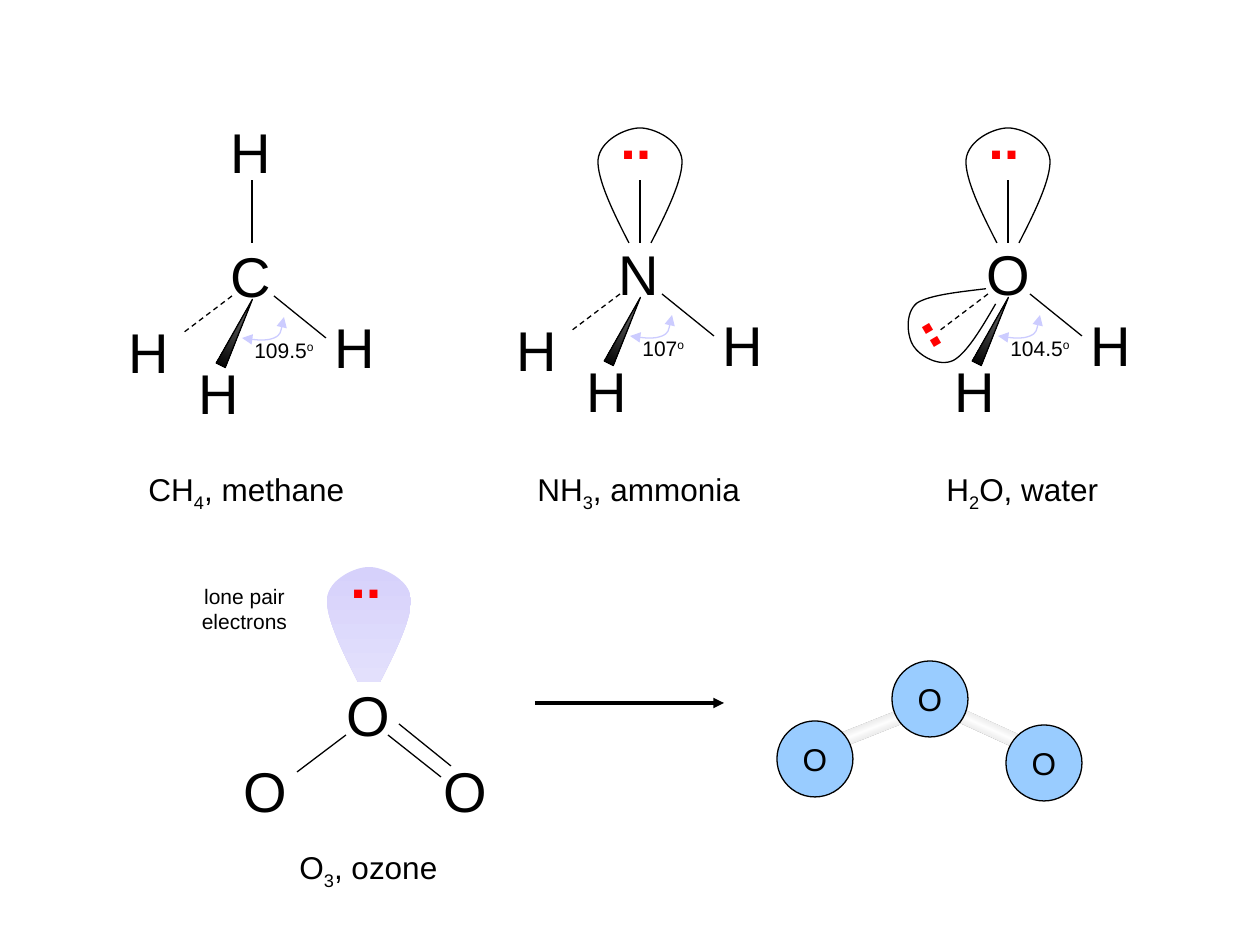
"""Build a slide of molecular shapes: methane, ammonia, water and ozone."""
from dataclasses import dataclass

from lxml import etree
from pptx import Presentation
from pptx.dml.color import RGBColor
from pptx.enum.dml import MSO_LINE
from pptx.enum.shapes import MSO_CONNECTOR, MSO_SHAPE
from pptx.enum.text import MSO_ANCHOR, MSO_AUTO_SIZE, PP_ALIGN
from pptx.oxml.ns import qn
from pptx.util import Pt

STRAIGHT = MSO_CONNECTOR.STRAIGHT
DASH = MSO_LINE.DASH
TRIANGLE, RECTANGLE, OVAL = MSO_SHAPE.ISOSCELES_TRIANGLE, MSO_SHAPE.RECTANGLE, MSO_SHAPE.OVAL
LEFT, CENTER = PP_ALIGN.LEFT, PP_ALIGN.CENTER
MIDDLE = MSO_ANCHOR.MIDDLE
FIT = MSO_AUTO_SIZE.SHAPE_TO_FIT_TEXT

PX = 914400 / 126
FONT = "Arial"
COLORS = {"ink": "000000", "electron": "FF0000", "arc": "CCCCFF", "ball": "99CCFF",
          "shade": "808080", "white": "FFFFFF", "lobe_top": "D6D1FB", "lobe_base": "E3E0FC"}
LOBE = [(-11, 115), (-27, 84), (-43, 51), (-42, 32), (-40, 12), (-14, 0), (0, 0),
        (14, 0), (40, 12), (42, 32), (43, 51), (27, 84), (11, 115)]
ARC = [(-10, 336), (2, 338), (14, 339), (22, 336), (29, 333), (30, 324), (32, 315)]


@dataclass
class Molecule:
    axis: int
    drop: int
    center: str
    angle: str
    angle_width: int
    hydrogens: list[tuple[int, int]]
    lone_pair: bool


@dataclass
class Caption:
    left: int
    top: int
    width: int
    formula: list[tuple[str, int]]


@dataclass
class Stop:
    position: int
    color: str
    opacity: int = 100


MOLECULES = [
    Molecule(252, 2, "C", "109.5", 86, [(-34, 109), (70, 304), (-136, 309), (-66, 350)], False),
    Molecule(640, 0, "N", "107", 68, [(70, 304), (-136, 309), (-66, 350)], True),
    Molecule(1008, 0, "O", "104.5", 86, [(70, 304), (-66, 350)], True),
]
CAPTIONS = [
    Caption(136, 464, 223, [("CH", 0), ("4", -25), (", methane", 0)]),
    Caption(525, 464, 229, [("NH", 0), ("3", -25), (", ammonia", 0)]),
    Caption(934, 464, 179, [("H", 0), ("2", -25), ("O, water", 0)]),
    Caption(287, 842, 165, [("O", 0), ("3", -25), (", ozone", 0)]),
]
WEDGE_STOPS = [Stop(0, "shade"), Stop(100, "ink")]
LOBE_STOPS = [Stop(0, "lobe_top"), Stop(100, "lobe_base")]
TUBE_STOPS = [Stop(0, "shade", 25), Stop(50, "white"), Stop(100, "shade", 25)]
OZONE_ATOMS = [(334, 674), (431, 750), (231, 750)]
OZONE_BONDS = [(346, 735, 297, 772), (399, 724, 451, 766), (388, 735, 441, 777)]
TUBES = [(937, 24.4), (821, -21.4)]
BALLS = [(777, 721), (892, 661), (1006, 725)]


def emu(px: float) -> int:
    return round(px * PX)


def rgb(name: str) -> RGBColor:
    return RGBColor.from_string(COLORS[name])


def outline(line, color: str, width: float = 0.75, dash=None, ends: tuple = ()) -> None:
    line.color.rgb = rgb(color)
    line.width = Pt(width)
    if dash is not None:
        line.dash_style = dash
    for end in ends:
        etree.SubElement(line._ln, qn(f"a:{end}"), type="triangle")


def shade(shape, stops: list[Stop]) -> None:
    shape.fill.gradient()
    shape.fill.gradient_angle = 270
    ramp = shape._element.xpath(".//a:gsLst")[0]
    ramp.clear()
    for stop in stops:
        step = etree.SubElement(ramp, qn("a:gs"), pos=str(stop.position * 1000))
        tone = etree.SubElement(step, qn("a:srgbClr"), val=COLORS[stop.color])
        if stop.opacity < 100:
            etree.SubElement(tone, qn("a:alpha"), val=str(stop.opacity * 1000))


def write(paragraph, runs: list[tuple[str, int]], size: int, color: str = "ink",
          bold: bool = False, align=LEFT) -> None:
    paragraph.alignment = align
    for words, baseline in runs:
        run = paragraph.add_run()
        run.text = words
        run.font.name, run.font.size, run.font.bold = FONT, Pt(size), bold
        run.font.color.rgb = rgb(color)
        if baseline:
            run._r.get_or_add_rPr().set("baseline", str(baseline * 1000))


def label(slide, left: int, top: int, width: int, height: int,
          lines: list[list[tuple[str, int]]], size: int, color: str = "ink",
          bold: bool = False, align=LEFT, rotation: float = 0) -> None:
    box = slide.shapes.add_textbox(emu(left), emu(top), emu(width), emu(height))
    box.rotation = rotation
    frame = box.text_frame
    frame.word_wrap, frame.auto_size = False, FIT
    for index, runs in enumerate(lines):
        paragraph = frame.add_paragraph() if index else frame.paragraphs[0]
        write(paragraph, runs, size, color, bold, align)


def atom(slide, left: int, top: int, symbol: str) -> None:
    label(slide, left, top, 69 if symbol == "O" else 66, 79, [[(symbol, 0)]], 32)


def electrons(slide, left: int, top: int, rotation: float = 0) -> None:
    label(slide, left, top, 57, 79, [[("..", 0)]], 32, "electron", True, rotation=rotation)


def bond(slide, x1: int, y1: int, x2: int, y2: int, width: float = 0.75,
         dash=None, ends: tuple = ()) -> None:
    link = slide.shapes.add_connector(STRAIGHT, emu(x1), emu(y1), emu(x2), emu(y2))
    outline(link.line, "ink", width, dash, ends)
    etree.SubElement(link._element.spPr, qn("a:effectLst"))


def curve(slide, points: list[tuple[float, float]]):
    """Draw cubic segments through every third point."""
    anchors = points[::3]
    builder = slide.shapes.build_freeform(*anchors[0], scale=PX)
    builder.add_line_segments(anchors[1:], close=False)
    shape = builder.convert_to_shape()
    shape.shadow.inherit = False
    shape.fill.background()
    left, top = (min(axis) for axis in zip(*anchors))
    for index, segment in enumerate(shape._element.xpath(".//a:lnTo")):
        segment.tag = qn("a:cubicBezTo")
        for place, (x, y) in enumerate(points[3 * index + 1:3 * index + 3]):
            control = etree.Element(qn("a:pt"), x=str(round(x - left)), y=str(round(y - top)))
            segment.insert(place, control)
    return shape


def lobe(slide, axis: int, top: int, scale: float = 1, rotation: float = 0):
    shape = curve(slide, [(axis + x * scale, top + y * scale) for x, y in LOBE])
    shape.rotation = rotation
    outline(shape.line, "ink")
    return shape


def solid(slide, kind, left: int, top: int, width: int, height: int, rotation: float = 0):
    shape = slide.shapes.add_shape(kind, emu(left), emu(top), emu(width), emu(height))
    shape.shadow.inherit = False
    shape.rotation = rotation
    return shape


def draw_molecule(slide, molecule: Molecule) -> None:
    x, y = molecule.axis, molecule.drop
    atom(slide, x - 34, 233 + y, molecule.center)
    bond(slide, x, 243, x, 180)
    bond(slide, x - 20, 294 + y, x - 69, 331 + y, dash=DASH)
    wedge = solid(slide, TRIANGLE, x - 20, 294 + y, 10, 73, 26.3)
    wedge.adjustments[0] = 0.42
    shade(wedge, WEDGE_STOPS)
    outline(wedge.line, "ink")
    bond(slide, x + 22, 294 + y, x + 74, 336 + y)
    arc = curve(slide, [(x + dx, y + dy) for dx, dy in ARC])
    outline(arc.line, "arc", ends=("headEnd", "tailEnd"))
    label(slide, x - 10, 329 + y, molecule.angle_width, 38, [[(molecule.angle, 0), ("o", 30)]], 12)
    for dx, top in molecule.hydrogens:
        atom(slide, x + dx, top + y, "H")
    if molecule.lone_pair:
        lobe(slide, x, 128)
        electrons(slide, x - 32, 97)


def draw_ozone(slide) -> None:
    cloud = lobe(slide, 369, 567)
    shade(cloud, LOBE_STOPS)
    cloud.line.fill.background()
    electrons(slide, 338, 536)
    label(slide, 189, 577, 111, 63, [[("lone pair", 0)], [("electrons", 0)]], 12, align=CENTER)
    for left, top in OZONE_ATOMS:
        atom(slide, left, top, "O")
    for ends in OZONE_BONDS:
        bond(slide, *ends)
    bond(slide, 535, 703, 724, 703, 2, ends=("tailEnd",))
    for left, rotation in TUBES:
        tube = solid(slide, RECTANGLE, left, 721, 102, 14, rotation)
        shade(tube, TUBE_STOPS)
        tube.line.fill.background()
    for left, top in BALLS:
        ball = solid(slide, OVAL, left, top, 76, 76)
        ball.fill.solid()
        ball.fill.fore_color.rgb = rgb("ball")
        outline(ball.line, "ink")
        ball.text_frame.word_wrap = False
        ball.text_frame.vertical_anchor = MIDDLE
        write(ball.text_frame.paragraphs[0], [("O", 0)], 18, align=CENTER)


def main() -> None:
    deck = Presentation()
    deck.slide_width, deck.slide_height = emu(1260), emu(945)
    slide = deck.slides.add_slide(deck.slide_layouts[6])
    for molecule in MOLECULES:
        draw_molecule(slide, molecule)
    lobe(slide, 952, 275, 0.8, 237.5)
    electrons(slide, 887, 305, 239.5)
    for caption in CAPTIONS:
        label(slide, caption.left, caption.top, caption.width, 50, [caption.formula], 18)
    draw_ozone(slide)
    deck.save("out.pptx")


if __name__ == "__main__":
    main()
